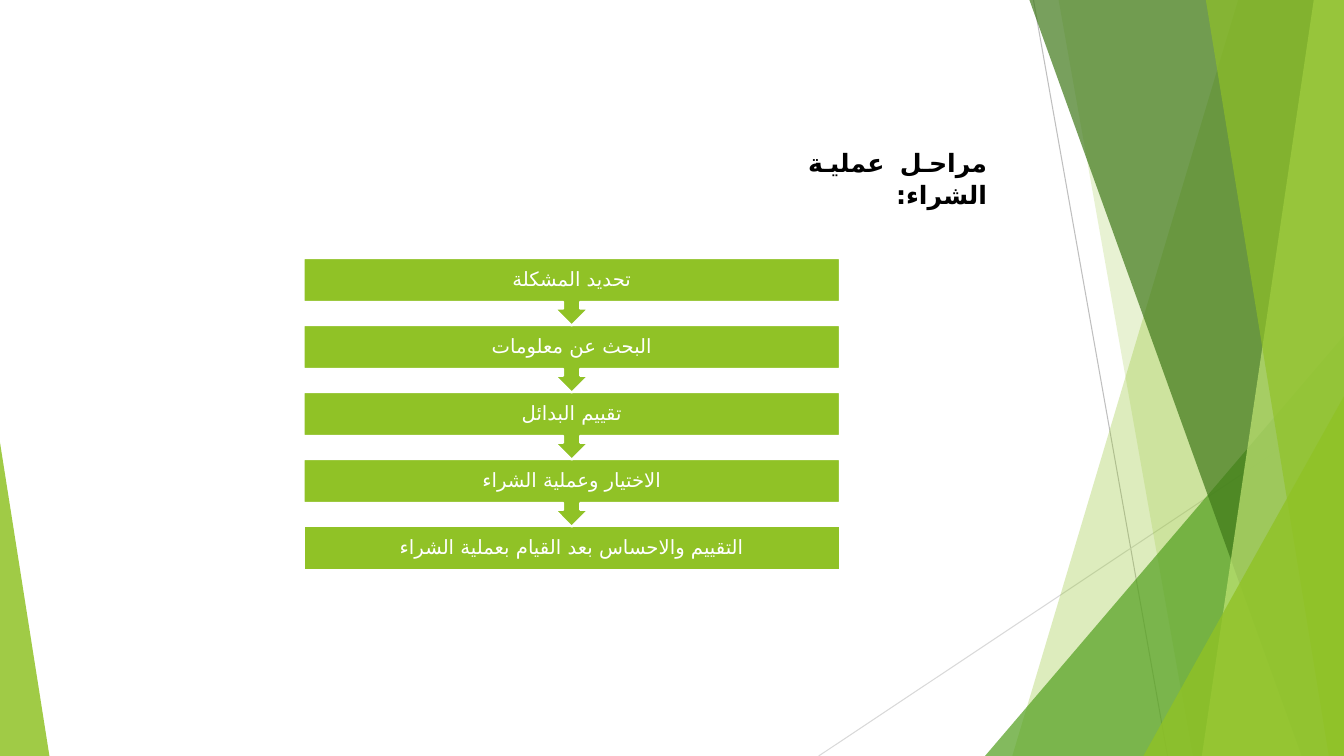
from dataclasses import dataclass

from lxml.etree import SubElement
from pptx import Presentation
from pptx.dml.color import RGBColor
from pptx.enum.shapes import MSO_CONNECTOR as Connector, MSO_SHAPE as Shape
from pptx.enum.text import MSO_ANCHOR as Anchor, MSO_AUTO_SIZE as AutoSize, PP_ALIGN as Align
from pptx.oxml.ns import qn
from pptx.util import Inches, Pt

WIDTH, HEIGHT = 13.33, 7.5


@dataclass(frozen=True)
class Theme:
    lime: str = "90C226"
    green: str = "54A021"
    forest: str = "3F7819"
    pale: str = "C0E474"
    white: str = "FFFFFF"
    black: str = "000000"
    grey: str = "BFBFBF"
    light_grey: str = "D9D9D9"
    title_font: str = "Calibri"
    step_font: str = "Karla"
    arabic_font: str = "DejaVu Sans"
    title_size: int = 18
    step_size: int = 14


class StageSlide:
    def __init__(self, slide, theme):
        self.slide = slide
        self.shapes = slide.shapes
        self.theme = theme

    def paint(self, shape, color, opacity=100):
        shape.shadow.inherit = False
        shape.fill.solid()
        shape.fill.fore_color.rgb = RGBColor.from_string(color)
        shape.line.fill.background()
        if opacity < 100:
            fill_color = shape.fill._xPr.find(qn("a:solidFill"))[0]
            SubElement(fill_color, qn("a:alpha")).set("val", str(opacity * 1000))

    def style_text(self, para, font, size, color, bold=False):
        para._p.get_or_add_pPr().set("rtl", "1")
        for span in para.runs:
            span.font.name = font
            span.font.size = Pt(size)
            span.font.bold = bold
            span.font.color.rgb = RGBColor.from_string(color)
            arabic = SubElement(span._r.get_or_add_rPr(), qn("a:cs"))
            arabic.set("typeface", self.theme.arabic_font)

    def line(self, start, end, color):
        points = [Inches(value) for value in (*start, *end)]
        line = self.shapes.add_connector(Connector.STRAIGHT, *points)
        line.line.color.rgb = RGBColor.from_string(color)
        line.line.width = Pt(0.75)
        SubElement(line._element.spPr, qn("a:effectLst"))

    def ribbon(self, top_left, bottom_left, color, opacity):
        builder = self.shapes.build_freeform(Inches(top_left), 0)
        corners = [(WIDTH, 0), (WIDTH, HEIGHT), (bottom_left, HEIGHT)]
        builder.add_line_segments([(Inches(x), Inches(y)) for x, y in corners])
        self.paint(builder.convert_to_shape(), color, opacity)

    def triangle(self, left, top, width, apex, color, opacity):
        frame = [Inches(value) for value in (left, top, width, HEIGHT - top)]
        triangle = self.shapes.add_shape(Shape.ISOSCELES_TRIANGLE, *frame)
        triangle.adjustments[0] = apex
        self.paint(triangle, color, opacity)

    def title(self, text, left, top, width, height):
        title = self.shapes.title
        title.left, title.top = Inches(left), Inches(top)
        title.width, title.height = Inches(width), Inches(height)
        frame = title.text_frame
        frame.text = text
        frame.word_wrap = True
        frame.auto_size = AutoSize.NONE
        frame.vertical_anchor = Anchor.TOP
        para = frame.paragraphs[0]
        para.alignment = Align.JUSTIFY
        para.line_spacing = 1.07
        para.space_after = Pt(8)
        theme = self.theme
        self.style_text(para, theme.title_font, theme.title_size, theme.black, bold=True)

    def step(self, text, kind, left, top, width, height):
        theme = self.theme
        frame = [Inches(value) for value in (left, top, width, height)]
        box = self.shapes.add_shape(kind, *frame)
        self.paint(box, theme.lime)
        box.line.color.rgb = RGBColor.from_string(theme.white)
        box.line.width = Pt(1.5)
        content = box.text_frame
        content.text = text
        content.word_wrap = True
        content.vertical_anchor = Anchor.MIDDLE
        content.margin_left = content.margin_right = Inches(0.11)
        content.margin_top = content.margin_bottom = Inches(0.11)
        para = content.paragraphs[0]
        para.alignment = Align.CENTER
        para.line_spacing = 0.9
        self.style_text(para, theme.step_font, theme.step_size, theme.white)

    def backdrop(self):
        theme = self.theme
        self.line((10.25, 0), (11.58, HEIGHT), theme.grey)
        self.line((WIDTH, 4.03), (8.12, HEIGHT), theme.light_grey)
        self.ribbon(12.28, 10.04, theme.lime, 30)
        self.ribbon(10.5, 11.83, theme.lime, 20)
        self.triangle(9.77, 3.33, 3.56, 1, theme.green, 72)
        self.ribbon(10.21, 12.91, theme.forest, 70)
        self.ribbon(13.03, 11.92, theme.pale, 70)
        self.ribbon(11.96, 13.18, theme.lime, 65)
        self.triangle(11.34, 3.93, 1.99, 1, theme.lime, 80)
        self.triangle(0, 4.39, 0.49, 0, theme.lime, 85)

    def stages(self, names, left, top, width, pitch):
        last = len(names) - 1
        for index, name in reversed(list(enumerate(names))):
            if index == last:
                kind, height = Shape.RECTANGLE, 0.44
            else:
                kind, height = Shape.DOWN_ARROW_CALLOUT, 0.67
            self.step(name, kind, left, top + index * pitch, width, height)


def main():
    deck = Presentation()
    deck.slide_width, deck.slide_height = Inches(WIDTH), Inches(HEIGHT)
    page = StageSlide(deck.slides.add_slide(deck.slide_layouts[5]), Theme())
    page.backdrop()
    page.stages(
        [
            "تحديد المشكلة",
            "البحث عن معلومات",
            "تقييم البدائل",
            "الاختيار وعملية الشراء",
            "التقييم والاحساس بعد القيام بعملية الشراء",
        ],
        left=3.01, top=2.56, width=5.32, pitch=0.665,
    )
    page.title("مراحل عملية الشراء:", 7.85, 1.39, 2.04, 0.43)
    deck.save("out.pptx")


if __name__ == "__main__":
    main()
